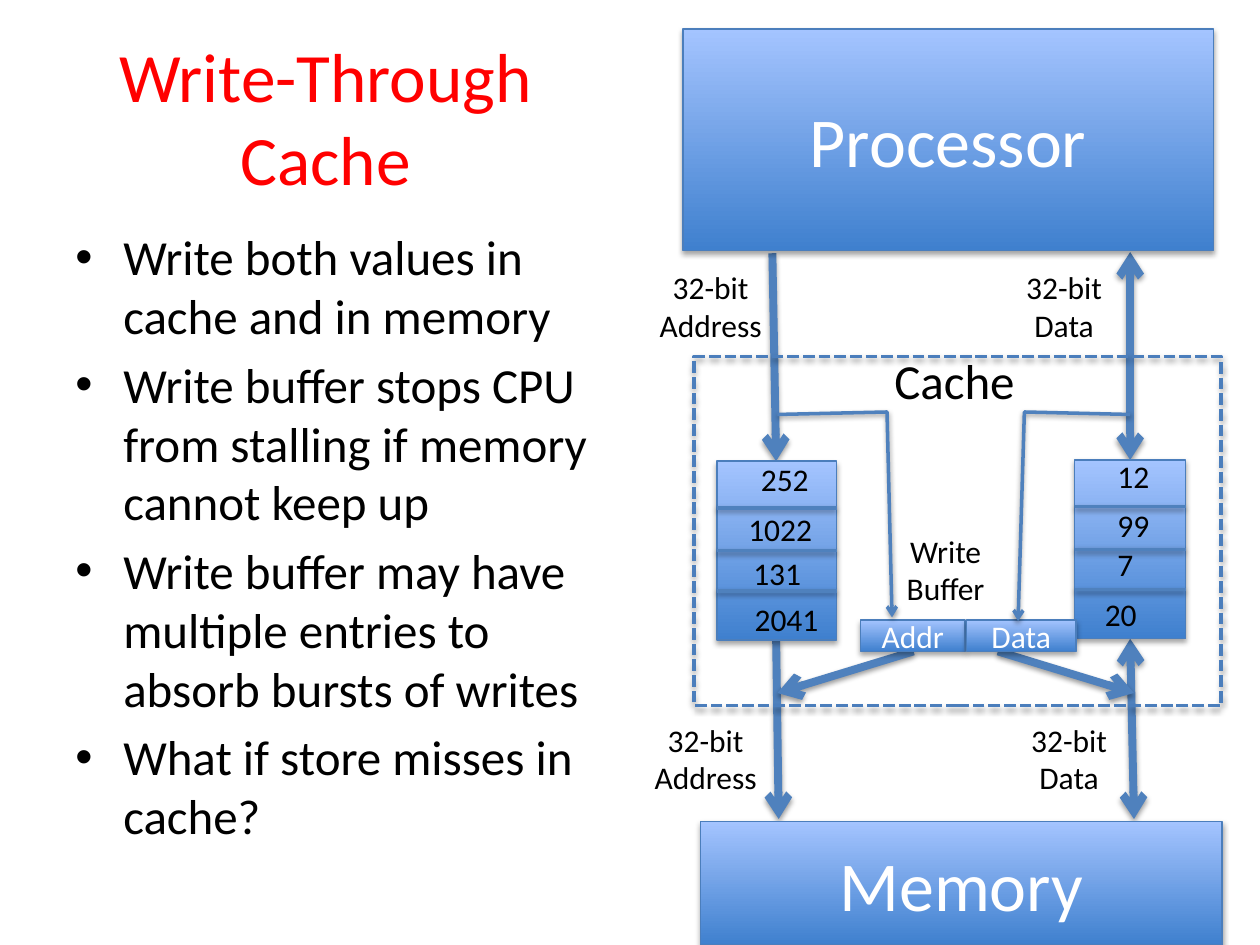
"""Build the write-through cache slide: bullets beside a processor, cache and memory diagram."""
import pptx
import pptx.dml.color
import pptx.enum.dml
import pptx.enum.shapes
import pptx.enum.text
import pptx.oxml
import pptx.oxml.ns
import pptx.util
from dataclasses import dataclass

Inches, Pt = pptx.util.Inches, pptx.util.Pt
ALIGN, ANCHOR = pptx.enum.text.PP_ALIGN, pptx.enum.text.MSO_ANCHOR
RECTANGLE = pptx.enum.shapes.MSO_SHAPE.RECTANGLE
STRAIGHT = pptx.enum.shapes.MSO_CONNECTOR.STRAIGHT


@dataclass(frozen=True)
class Theme:
    font: str = "Calibri"
    heading: str = "FF0000"
    ink: str = "000000"
    on_box: str = "FFFFFF"
    box_bottom: str = "3F80CE"
    box_top: str = "A4C4FF"
    outline: str = "4B7EBC"
    wire: str = "4F81BD"
    title_size: float = 39.6
    unit_size: float = 40
    body_size: float = 28
    label_size: float = 18
    bus_width: float = 4.5
    thin_width: float = 2
    frame_width: float = 2.25
    outline_width: float = 0.75


THEME = Theme()

TITLE = "Write-Through Cache"
POINTS = [
    "Write both values in cache and in memory",
    "Write buffer stops CPU from stalling if memory cannot keep up",
    "Write buffer may have multiple entries to absorb bursts of writes",
    "What if store misses in cache?",
]
UNITS = [
    ("Processor", (5.42, 0.23, 4.21, 1.76)),
    ("Memory", (5.56, 6.52, 4.14, 0.98)),
]
CACHE_FRAME = (5.51, 2.83, 4.18, 2.77)
STORES = [(5.69, 3.66, 0.95, 1.42), (8.53, 3.65, 0.88, 1.42)]
ROW_BREAKS = (0.37, 0.71, 1.03)
BUFFER = [("Addr", (6.83, 4.92, 0.83, 0.25)), ("Data", (7.67, 4.92, 0.87, 0.25))]
BUSES = [
    ((6.16, 5.08), (6.18, 6.5), False),
    ((8.97, 5.07), (9, 6.5), True),
    ((8.97, 2), (8.97, 3.65), True),
    ((6.13, 2.01), (6.16, 3.66), False),
    ((7.92, 5.17), (9, 5.5), False),
    ((7.25, 5.17), (6.17, 5.5), False),
]
BUFFER_WIRES = [
    [(6.17, 3.29), (7.04, 3.27), (7.08, 4.9)],
    [(8.97, 3.29), (8.13, 3.27), (8.08, 4.93)],
]
BUS_LABELS = [
    (["32-bit", "Address"], (5.13, 2.08, 1.02, 0.71), False),
    (["32-bit", "Data"], (8.04, 2.08, 0.81, 0.71), False),
    (["32-bit", "Address"], (5.09, 5.67, 1.02, 0.71), False),
    (["32-bit", "Data"], (8.08, 5.67, 0.81, 0.71), False),
    (["Write Buffer"], (6.92, 4.17, 1.17, 0.71), True),
]
ENTRIES = [
    ("252", (5.94, 3.6, 0.85, 0.4), True),
    ("1022", (5.84, 4, 0.71, 0.4), False),
    ("131", (5.88, 4.35, 0.85, 0.4), True),
    ("2041", (5.89, 4.71, 0.85, 0.4), True),
    ("12", (8.77, 3.58, 0.46, 0.4), False),
    ("99", (8.77, 3.97, 0.46, 0.4), False),
    ("7", (8.77, 4.28, 0.33, 0.4), False),
    ("20", (8.67, 4.67, 0.46, 0.4), False),
]


def rgb(value):
    return pptx.dml.color.RGBColor.from_string(value)


def append_xml(parent, tag, attributes="", inner=""):
    namespace = pptx.oxml.ns.nsdecls("a")
    parent.append(pptx.oxml.parse_xml(f"<a:{tag} {namespace} {attributes}>{inner}</a:{tag}>"))


def add_shadow(part, alpha=35, distance=1.8):
    color = f'<a:srgbClr val="000000"><a:alpha val="{alpha * 1000}"/></a:srgbClr>'
    append_xml(part._element.spPr, "effectLst", inner=(
        f'<a:outerShdw blurRad="{Pt(3.1)}" dist="{Pt(distance)}" dir="5400000" '
        f'rotWithShape="0">{color}</a:outerShdw>'))


def style_wire(wire, width, head=False, tail=False):
    wire.line.color.rgb = rgb(THEME.wire)
    wire.line.width = Pt(width)
    outline = wire._element.spPr.find(pptx.oxml.ns.qn("a:ln"))
    for tag, shown in (("headEnd", head), ("tailEnd", tail)):
        if shown:
            append_xml(outline, tag, 'type="arrow"')
    add_shadow(wire, 38, 1.6)


def write(frame, lines, size, color, align=ALIGN.LEFT, anchor=ANCHOR.TOP, wrap=True):
    frame.word_wrap = wrap
    frame.vertical_anchor = anchor
    for index, line in enumerate(lines):
        paragraph = frame.paragraphs[0] if index == 0 else frame.add_paragraph()
        paragraph.alignment = align
        run = paragraph.add_run()
        run.text = line
        run.font.name = THEME.font
        run.font.size = Pt(size)
        run.font.color.rgb = rgb(color)


def add_text(slide, place, lines, size, color=THEME.ink, **layout):
    frame = slide.shapes.add_textbox(*map(Inches, place)).text_frame
    write(frame, lines, size, color, **layout)
    return frame


def add_line(slide, start, end, width, **arrows):
    line = slide.shapes.add_connector(STRAIGHT, *map(Inches, start + end))
    style_wire(line, width, **arrows)


def add_box(slide, place, text="", size=THEME.label_size):
    box = slide.shapes.add_shape(RECTANGLE, *map(Inches, place))
    box.fill.gradient()
    box.fill.gradient_angle = 90
    for stop, color in zip(box.fill.gradient_stops, (THEME.box_bottom, THEME.box_top)):
        stop.color.rgb = rgb(color)
    box.line.color.rgb = rgb(THEME.outline)
    box.line.width = Pt(THEME.outline_width)
    add_shadow(box)
    if text:
        write(box.text_frame, [text], size, THEME.on_box, ALIGN.CENTER, ANCHOR.MIDDLE)


def add_points(slide):
    frame = add_text(slide, (0.5, 1.75, 4.42, 4.95), POINTS, THEME.body_size)
    for paragraph in frame.paragraphs:
        paragraph.space_before = Pt(THEME.body_size * 0.2)
        properties = paragraph._p.get_or_add_pPr()
        properties.set("marL", str(Inches(0.38)))
        properties.set("indent", str(Inches(-0.38)))
        append_xml(properties, "buFont", 'typeface="Arial"')
        append_xml(properties, "buChar", 'char="•"')


def add_cache_frame(slide):
    frame = slide.shapes.add_shape(RECTANGLE, *map(Inches, CACHE_FRAME))
    frame.fill.background()
    frame.line.color.rgb = rgb(THEME.outline)
    frame.line.width = Pt(THEME.frame_width)
    frame.line.dash_style = pptx.enum.dml.MSO_LINE.SQUARE_DOT
    add_shadow(frame)


def add_store(slide, place):
    left, top, width, _ = place
    add_box(slide, place)
    for offset in ROW_BREAKS:
        add_line(slide, (left, top + offset), (left + width, top + offset), THEME.thin_width)


def add_buffer_wire(slide, points):
    start, *bends = [(Inches(x), Inches(y)) for x, y in points]
    builder = slide.shapes.build_freeform(*start)
    builder.add_line_segments(bends, close=False)
    wire = builder.convert_to_shape()
    wire.fill.background()
    style_wire(wire, THEME.thin_width, tail=True)


def main():
    deck = pptx.Presentation()
    deck.slide_width, deck.slide_height = Inches(10), Inches(7.5)
    slide = deck.slides.add_slide(deck.slide_layouts[6])
    add_text(slide, (0.5, 0.3, 4.17, 1.25), [TITLE], THEME.title_size, THEME.heading,
             align=ALIGN.CENTER, anchor=ANCHOR.MIDDLE)
    add_points(slide)
    for start, end, two_way in BUSES:
        add_line(slide, start, end, THEME.bus_width, head=two_way, tail=True)
    for name, place in UNITS:
        add_box(slide, place, name, THEME.unit_size)
    add_cache_frame(slide)
    add_text(slide, (7, 2.73, 1.17, 0.57), ["Cache"], THEME.body_size, wrap=False)
    for place in STORES:
        add_store(slide, place)
    for value, place, wrap in ENTRIES:
        add_text(slide, place, [value], THEME.label_size, wrap=wrap)
    for name, place in BUFFER:
        add_box(slide, place, name)
    for points in BUFFER_WIRES:
        add_buffer_wire(slide, points)
    for lines, place, wrap in BUS_LABELS:
        add_text(slide, place, lines, THEME.label_size, align=ALIGN.CENTER, wrap=wrap)
    deck.save("out.pptx")


if __name__ == "__main__":
    main()
